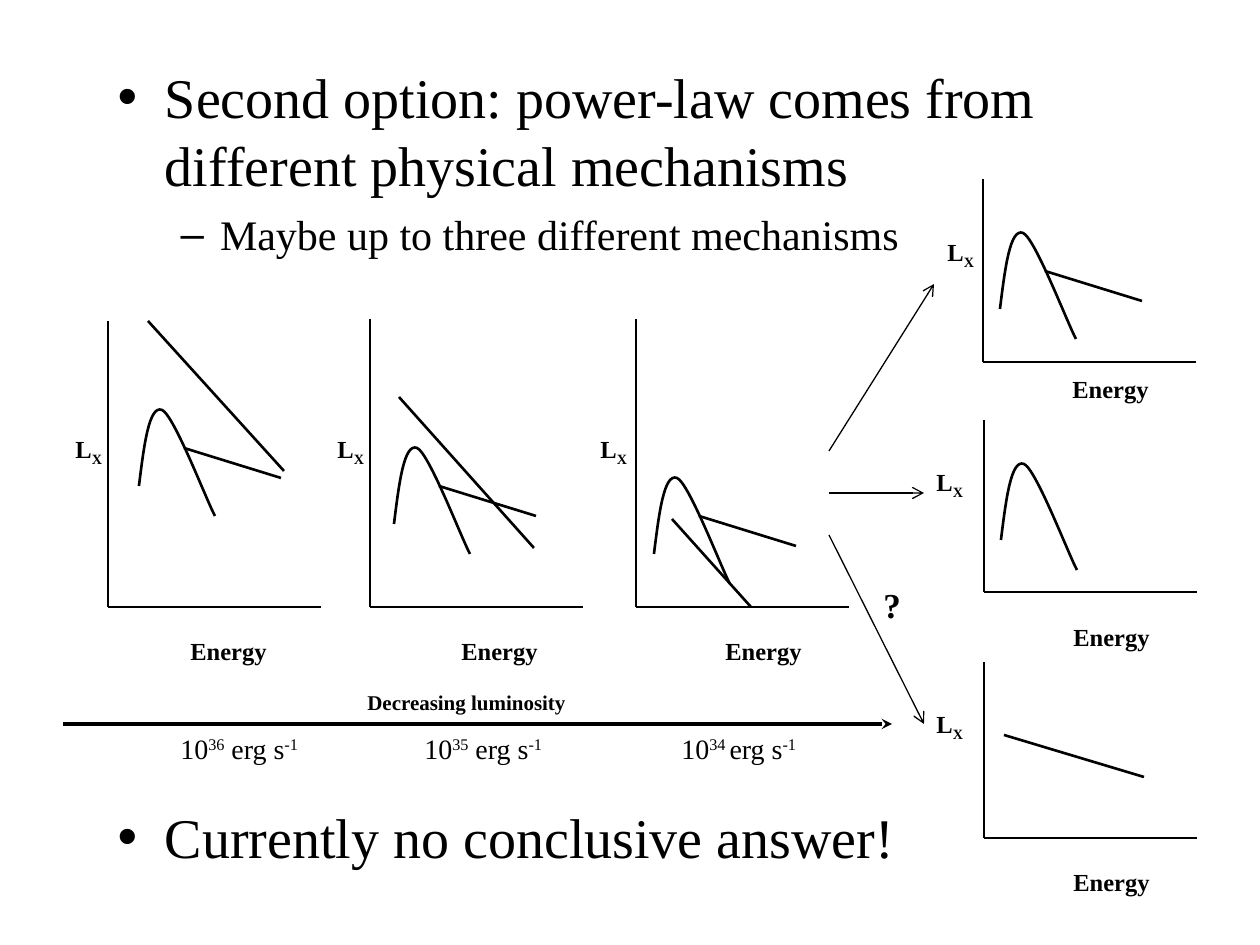
"""Build the slide on power-law mechanisms at decreasing luminosity."""
import lxml.etree
import pptx
import pptx.dml.color
import pptx.enum.text
import pptx.oxml.ns
import pptx.util

BLACK = pptx.dml.color.RGBColor(0, 0, 0)
FONT = "Times New Roman"
SCALE = 914400 / 126
AXIS_WIDTH = 213
HUMP = [(5, -40), (10, -81), (23, -76), (35, -71), (67, 13), (76, 30)]
TAIL_START, TAIL_END = (45, -38), (142, -8)
SUBSCRIPT, SUPERSCRIPT = -25, 30

PANELS = [
    dict(corner=(108, 607), top=321, label=(63, 428), energy=(178, 630),
         hump=(139, 486), tail=True, slope=((148, 321), (284, 471))),
    dict(corner=(370, 607), top=319, label=(325, 428), energy=(449, 630),
         hump=(394, 524), tail=True, slope=((399, 397), (534, 548))),
    dict(corner=(636, 607), top=319, label=(588, 428), energy=(713, 630),
         hump=(654, 554), tail=True, slope=((672, 519), (751, 607))),
    dict(corner=(983, 362), top=179, label=(935, 231), energy=(1060, 368),
         hump=(1000, 309), tail=True),
    dict(corner=(984, 592), top=420, label=(924, 461), energy=(1061, 616),
         hump=(1001, 540)),
    dict(corner=(984, 838), top=662, label=(924, 703), energy=(1061, 861),
         slope=((1004, 735), (1144, 777))),
]
ARROWS = [
    ((829, 451), (934, 284)),
    ((829, 493), (924, 493)),
    ((829, 535), (924, 724)),
]


def emu(length):
    return pptx.util.Emu(round(length * SCALE))


def qname(tag):
    return pptx.oxml.ns.qn(tag)


class SlideBuilder:
    """Hold the style and the slide, and draw each kind of element."""

    def __init__(self, slide):
        self.slide = slide
        self.shapes = slide.shapes

    def style_font(self, paragraph, size, bold=False):
        font = paragraph.font
        font.name, font.size, font.bold = FONT, pptx.util.Pt(size), bold
        font.color.rgb = BLACK

    def body(self, items):
        self.shapes.title.element.getparent().remove(self.shapes.title.element)
        body = self.slide.placeholders[1]
        body.left, body.top, body.width, body.height = map(emu, (105, 55, 1071, 840))
        frame = body.text_frame
        frame.auto_size = pptx.enum.text.MSO_AUTO_SIZE.NONE
        for index, (text, level, size, before, spacing) in enumerate(items):
            paragraph = frame.add_paragraph() if index else frame.paragraphs[0]
            paragraph.text, paragraph.level = text, level
            paragraph.space_before = pptx.util.Pt(before)
            paragraph.line_spacing = spacing
            self.style_font(paragraph, size)

    def text(self, position, extent, runs, size, bold=True, tabs=()):
        box = self.shapes.add_textbox(*map(emu, (*position, *extent)))
        box.text_frame.word_wrap = False
        paragraph = box.text_frame.paragraphs[0]
        if tabs:
            properties = paragraph._p.get_or_add_pPr()
            tab_list = lxml.etree.SubElement(properties, qname("a:tabLst"))
            for tab in tabs:
                lxml.etree.SubElement(tab_list, qname("a:tab"), pos=str(emu(tab)), algn="l")
        for content, baseline in runs:
            run = paragraph.add_run()
            run.text = content
            if baseline:
                run.font._element.set("baseline", str(baseline * 1000))
        self.style_font(paragraph, size, bold)

    def line(self, start, end, width=1.5, head=None):
        connector = self.shapes.add_connector(1, *map(emu, (*start, *end)))
        connector.line.color.rgb = BLACK
        connector.line.width = pptx.util.Pt(width)
        if head:
            outline = connector.line._get_or_add_ln()
            lxml.etree.SubElement(outline, qname("a:tailEnd"), type=head)
        lxml.etree.SubElement(connector._element.spPr, qname("a:effectLst"))

    def curve(self, start, offsets):
        builder = self.shapes.build_freeform(*start, scale=SCALE)
        points = [(start[0] + x, start[1] + y) for x, y in offsets]
        builder.add_line_segments(points, close=False)
        shape = builder.convert_to_shape()
        segments = list(shape._element.iter(qname("a:lnTo")))
        for first in range(0, len(segments), 3):
            bezier = lxml.etree.Element(qname("a:cubicBezTo"))
            segments[first].addprevious(bezier)
            for segment in segments[first:first + 3]:
                bezier.append(segment[0])
                segment.getparent().remove(segment)
        shape.shadow.inherit = False
        shape.fill.background()
        shape.line.color.rgb = BLACK
        shape.line.width = pptx.util.Pt(1.5)

    def panel(self, corner, top, label, energy, hump=None, tail=False, slope=None):
        left, bottom = corner
        self.line((left, top), corner)
        self.line(corner, (left + AXIS_WIDTH, bottom))
        self.text(label, (54, 43), [("L", 0), ("X", SUBSCRIPT)], 14)
        self.text(energy, (103, 42), [("Energy", 0)], 14)
        if hump:
            self.curve(hump, HUMP)
        if tail:
            ends = [(hump[0] + x, hump[1] + y) for x, y in (TAIL_START, TAIL_END)]
            self.line(*ends)
        if slope:
            self.line(*slope)


def main():
    presentation = pptx.Presentation()
    presentation.slide_width = pptx.util.Inches(10)
    presentation.slide_height = pptx.util.Inches(7.5)
    builder = SlideBuilder(presentation.slides.add_slide(presentation.slide_layouts[1]))

    large_line = pptx.util.Pt(39)
    builder.body([
        ("Second option: power-law comes from different physical mechanisms", 0, 32, 0, large_line),
        ("Maybe up to three different mechanisms", 1, 24, 6, 1.0),
        ("Currently no conclusive answer!", 0, 32, 310, large_line),
    ])
    builder.line((63, 724), (892, 724), 2, "stealth")
    builder.text((355, 683), (233, 38), [("Decreasing luminosity", 0)], 12)
    for panel in PANELS:
        builder.panel(**panel)
    for start, end in ARROWS:
        builder.line(start, end, 0.75, "arrow")
    builder.text((871, 577), (43, 55), [("?", 0)], 20)

    luminosities = []
    for prefix, exponent, unit in (("", "36", " erg s"), ("\t", "35", " erg s"), ("\t", "34 ", "erg s")):
        luminosities += [(prefix + "10", 0), (exponent, SUPERSCRIPT), (unit, 0), ("-1", SUPERSCRIPT)]
    builder.text((168, 725), (663, 47), luminosities, 16, False, (244, 501))
    presentation.save("out.pptx")


if __name__ == "__main__":
    main()
